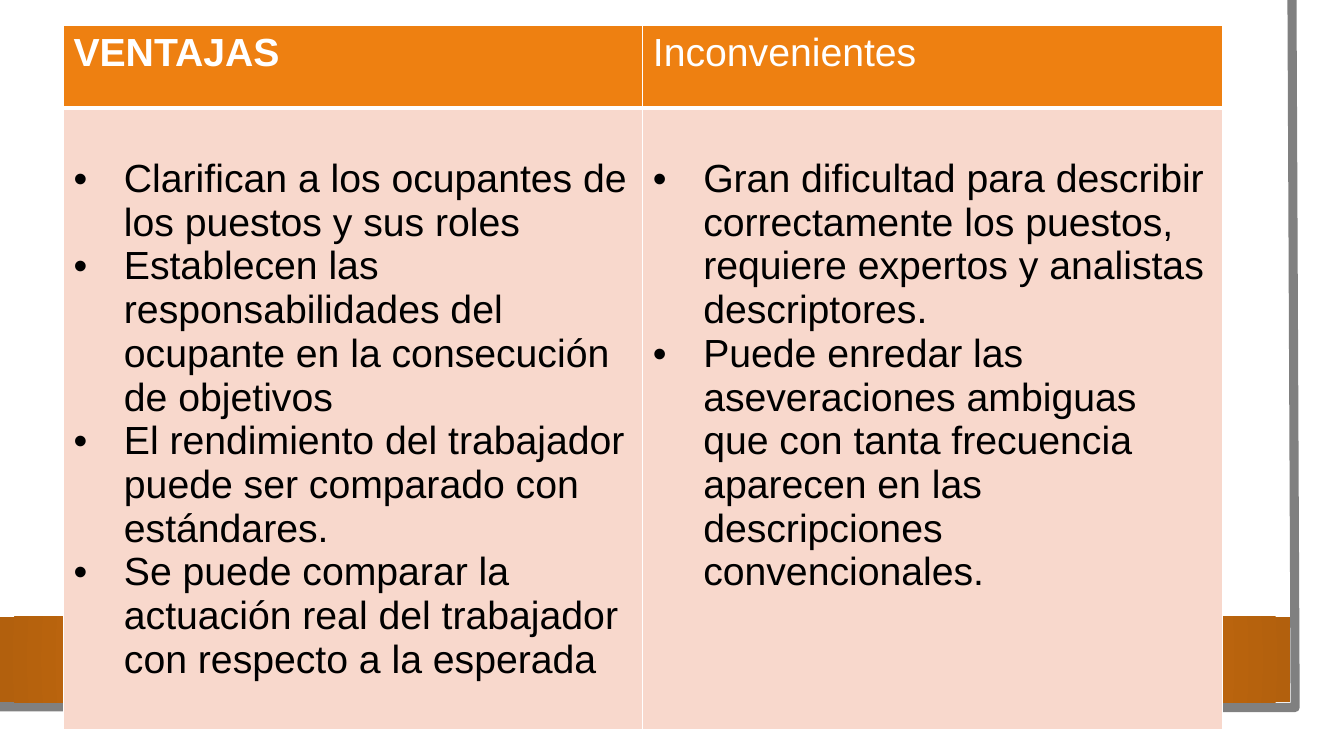
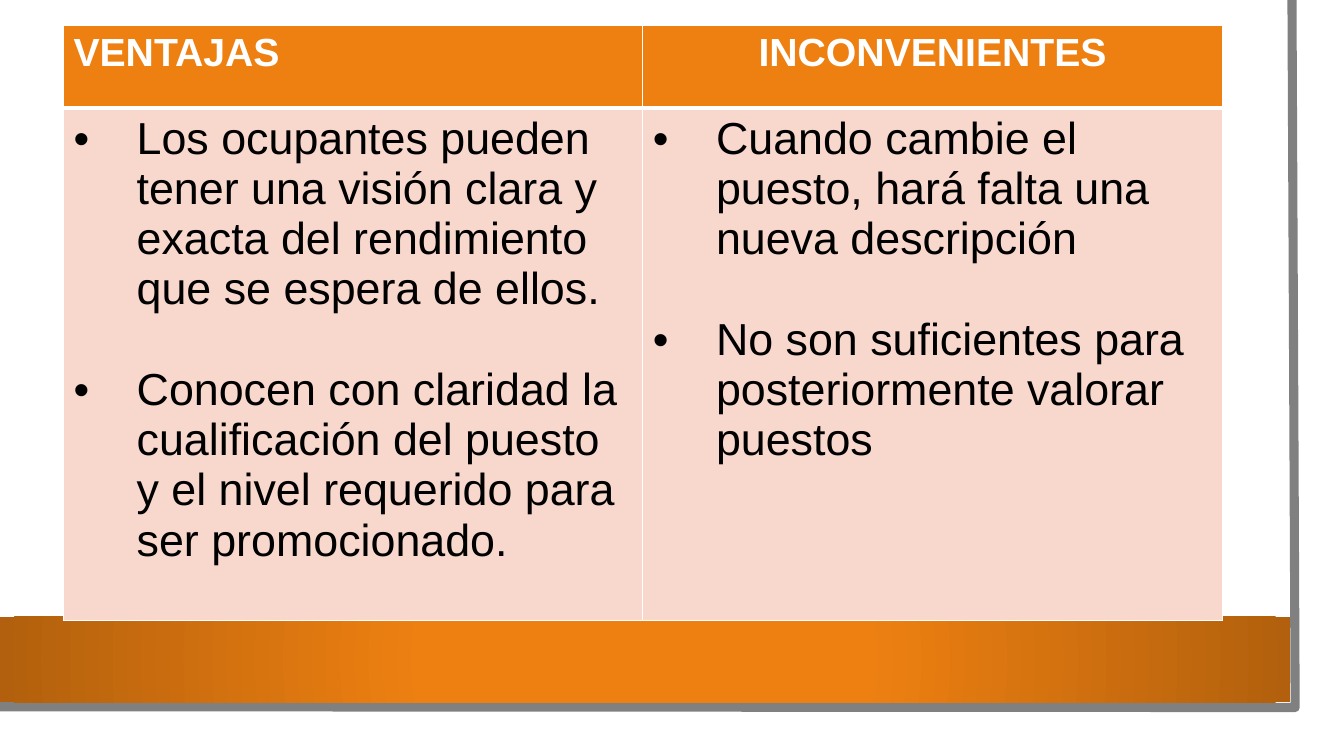
from dataclasses import dataclass

from lxml import etree
from pptx import Presentation
from pptx.dml.color import RGBColor
from pptx.enum.shapes import MSO_SHAPE
from pptx.enum.text import PP_ALIGN
from pptx.oxml.ns import qn
from pptx.util import Cm, Pt

RECT = MSO_SHAPE.RECTANGLE
LEFT, CENTER = PP_ALIGN.LEFT, PP_ALIGN.CENTER


@dataclass(frozen=True)
class Theme:
    font: str = "Arial"
    white: str = "FFFFFF"
    ink: str = "000000"
    orange: str = "EE8011"
    brown: str = "B2600D"
    pink: str = "F8D8CC"
    gray: str = "808080"
    head: int = 28
    thin: float = 1
    thick: float = 3
    frame: float = 6.5


def rgb(code):
    return RGBColor.from_string(code)


def add(parent, tag, **attrs):
    return etree.SubElement(parent, qn(tag), attrs)


class Deck:
    def __init__(self, theme):
        self.theme = theme
        self.prs = Presentation()
        self.prs.slide_width, self.prs.slide_height = Cm(33.87), Cm(19.05)
        self.slide = None

    def page(self):
        self.slide = self.prs.slides.add_slide(self.prs.slide_layouts[6])
        self.frame()
        self.band()

    # Gray edge on the right and along the bottom
    def frame(self):
        pen = self.slide.shapes.build_freeform(Cm(32.56), 0)
        pen.add_line_segments(
            [(Cm(32.64), Cm(17.83)), (Cm(-0.08), Cm(17.81))], close=False)
        edge = pen.convert_to_shape()
        edge.shadow.inherit = False
        edge.fill.background()
        edge.line.color.rgb = rgb(self.theme.gray)
        edge.line.width = Pt(self.theme.frame)

    # Footer band, shaded outwards from its centre
    def band(self):
        bar = self.slide.shapes.add_shape(
            RECT, 0, Cm(15.54), Cm(32.51), Cm(2.16))
        bar.shadow.inherit = False
        bar.line.fill.background()
        bar.fill.gradient()
        shades = ((0.34, self.theme.orange), (1, self.theme.brown))
        for stop, (place, code) in zip(bar.fill.gradient_stops, shades):
            stop.position = place
            stop.color.rgb = rgb(code)
        grad = bar._element.spPr.find(qn("a:gradFill"))
        grad.remove(grad.find(qn("a:lin")))
        focus = add(grad, "a:path", path="circle")
        add(focus, "a:fillToRect", l="50000", t="50000", r="50000", b="50000")

    # Two-column table: heads are (text, bold, align), lists hold bullets
    def table(self, heads, lists, size, height, indent, gap=0, top=0.13):
        wide, high = Cm(14.6), Cm(2.08)
        grid = self.slide.shapes.add_table(
            2, 2, Cm(1.6), Cm(0.65), wide * 2, high + Cm(height)).table
        grid.first_row = grid.horz_banding = False
        grid.rows[0].height, grid.rows[1].height = high, Cm(height)
        look = self.theme
        for col, (text, bold, align) in enumerate(heads):
            grid.columns[col].width = wide
            cell = grid.cell(0, col)
            self.paint(cell, look.orange, look.thin, look.thick)
            par = cell.text_frame.paragraphs[0]
            par.alignment = align
            self.run(par, text, look.head, look.white, bold)
        for col, items in enumerate(lists):
            cell = grid.cell(1, col)
            cell.margin_top = Cm(top)
            self.paint(cell, look.pink, look.thick, look.thin)
            for row, text in enumerate(items):
                frame = cell.text_frame
                par = frame.add_paragraph() if row else frame.paragraphs[0]
                self.bullet(par, indent)
                if row and gap:
                    par.space_before = Pt(gap)
                self.run(par, text, size, look.ink)

    # Cell fill and white borders
    def paint(self, cell, code, top, base):
        cell.fill.solid()
        cell.fill.fore_color.rgb = rgb(code)
        props = cell._tc.get_or_add_tcPr()
        thin = self.theme.thin
        sides = (("L", thin), ("R", thin), ("T", top), ("B", base))
        for spot, (side, width) in enumerate(sides):
            line = etree.Element(qn("a:ln" + side), w=str(Pt(width)))
            add(add(line, "a:solidFill"), "a:srgbClr", val=self.theme.white)
            props.insert(spot, line)

    def bullet(self, par, indent):
        props = par._p.get_or_add_pPr()
        props.set("marL", str(Cm(indent)))
        props.set("indent", str(-Cm(indent)))
        add(props, "a:buFont", typeface=self.theme.font)
        add(props, "a:buChar", char="•")

    def run(self, par, text, size, code, bold=False):
        run = par.add_run()
        run.text = text
        font = run.font
        font.name, font.size, font.bold = self.theme.font, Pt(size), bold
        font.color.rgb = rgb(code)


def main():
    deck = Deck(Theme())

    # Roles and standards
    deck.page()
    deck.table(
        [("VENTAJAS", True, LEFT), ("Inconvenientes", False, LEFT)],
        [["Clarifican a los ocupantes de los puestos y sus roles",
          "Establecen las responsabilidades del ocupante en la "
          "consecución de objetivos",
          "El rendimiento del trabajador puede ser comparado con "
          "estándares.",
          "Se puede comparar la actuación real del trabajador con "
          "respecto a la esperada"],
         ["Gran dificultad para describir correctamente los puestos, "
          "requiere expertos y analistas descriptores.",
          "Puede enredar las aseveraciones ambiguas que con tanta "
          "frecuencia aparecen en las descripciones convencionales."]],
        size=28, height=15.65, indent=1.27, top=1.23)

    # Expectations and changes
    deck.page()
    deck.table(
        [("VENTAJAS", True, LEFT), ("INCONVENIENTES", True, CENTER)],
        [["Los ocupantes pueden tener una visión clara y exacta del "
          "rendimiento que se espera de ellos.",
          "Conocen con claridad la cualificación del puesto y el nivel "
          "requerido para ser promocionado."],
         ["Cuando cambie el puesto, hará falta una nueva descripción",
          "No son suficientes para posteriormente valorar puestos"]],
        size=32, height=12.9, indent=1.59, gap=36)

    deck.prs.save("out.pptx")


if __name__ == "__main__":
    main()
